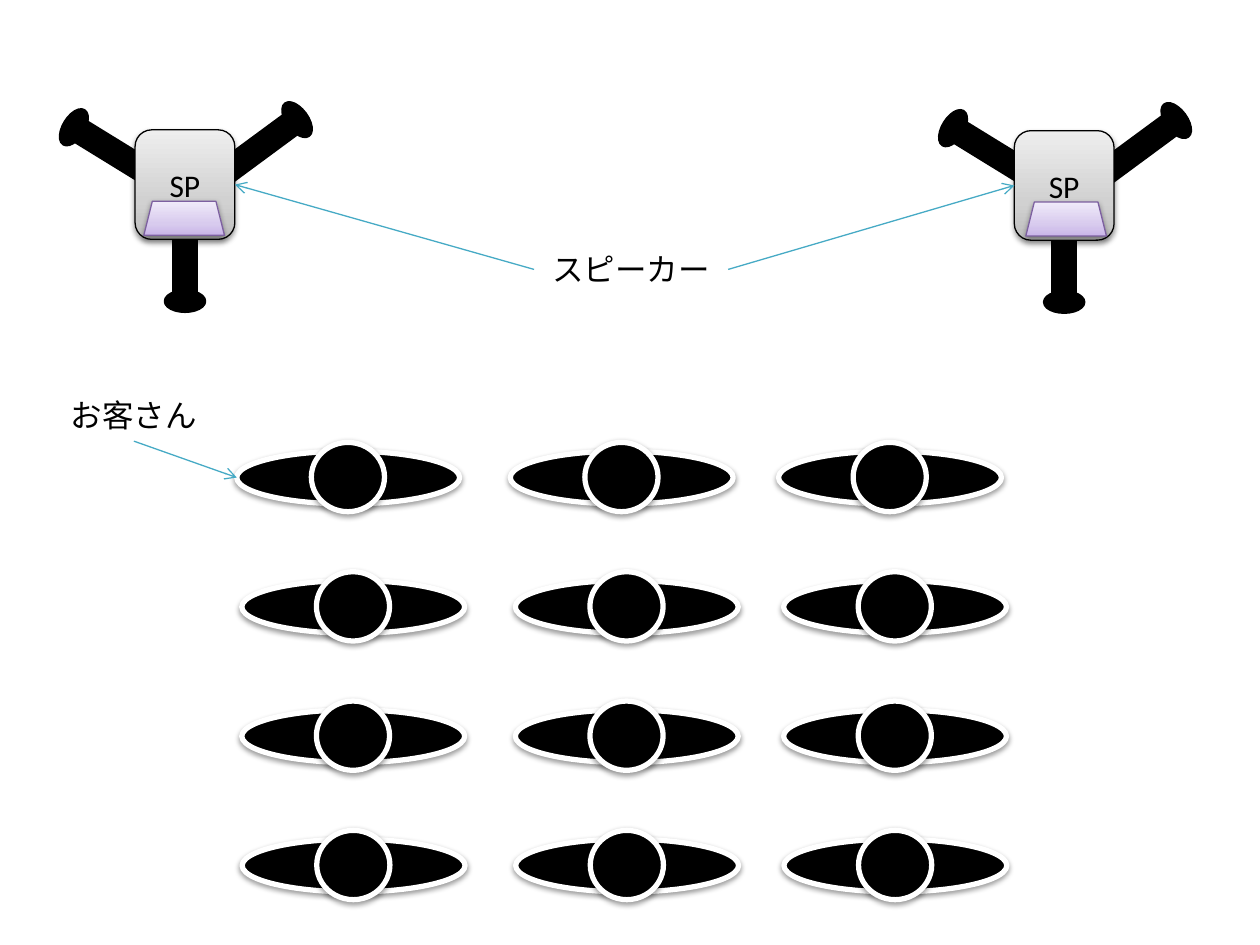
from lxml.etree import SubElement
from pptx import Presentation
from pptx.dml.color import RGBColor
from pptx.enum.shapes import MSO_CONNECTOR, MSO_SHAPE as Shape
from pptx.enum.text import MSO_ANCHOR, MSO_AUTO_SIZE, PP_ALIGN
from pptx.oxml.ns import qn
from pptx.util import Pt

COLORS = {
    "black": "000000",
    "white": "FFFFFF",
    "arrow": "46AAC5",
    "panel_edge": "7D60A0",
}
GRADIENTS = {
    "cabinet": [(0, "BDBDBD"), (35, "D1D1D1"), (100, "EEEEEE")],
    "panel": [(0, "C9B5E8"), (35, "D8CBEE"), (100, "F0EAF9")],
}
FONT = "Calibri"
TOP, LEFT, BOTTOM, RIGHT = range(4)

CABINET_SIZE = (57, 62.6)
FOOT_WIDTH, FOOT_HEIGHT = 22.3, 11.5
ROD_WIDTH, ROD_HEIGHT = 13, 62.6
LEG_HEIGHT = 64.8
LEGS = [(28.5, 71.3, 0), (-12.3, 12.5, 121.6), (71.1, 10, 233.6)]

COLUMN_LEFTS = [138.2, 294.5, 447.8]
ROW_SHIFTS = [-2.9, 0, 0, 0.2]
FIRST_ROW_TOP, ROW_STEP = 257.8, 73.9


def rgb(name):
    return RGBColor.from_string(COLORS[name])


def add_shadow(shape):
    effects = shape._element.spPr.find(qn("a:effectLst"))
    shadow = SubElement(effects, qn("a:outerShdw"), blurRad="40000",
                        dist="20000", dir="5400000", rotWithShape="0")
    tint = SubElement(shadow, qn("a:srgbClr"), val=COLORS["black"])
    SubElement(tint, qn("a:alpha"), val="38000")


def fill_gradient(shape, stops):
    shape.fill.gradient()
    shape.fill.gradient_angle = 90
    stop_list = shape._element.spPr.find(".//" + qn("a:gsLst"))
    for stop in list(stop_list):
        stop_list.remove(stop)
    for percent, value in stops:
        stop = SubElement(stop_list, qn("a:gs"), pos=str(percent * 1000))
        SubElement(stop, qn("a:srgbClr"), val=value)


def add_figure(shapes, kind, left, top, width, height, edge="black",
               edge_width=0.75, gradient=None, shadow=True):
    figure = shapes.add_shape(kind, Pt(left), Pt(top), Pt(width), Pt(height))
    figure.shadow.inherit = False
    if gradient:
        fill_gradient(figure, GRADIENTS[gradient])
    else:
        figure.fill.solid()
        figure.fill.fore_color.rgb = rgb("black")
    figure.line.color.rgb = rgb(edge)
    figure.line.width = Pt(edge_width)
    if shadow:
        add_shadow(figure)
    return figure


def write(frame, text, size=18, color="black", align=PP_ALIGN.CENTER,
          anchor=MSO_ANCHOR.TOP):
    frame.word_wrap = True
    frame.vertical_anchor = anchor
    paragraph = frame.paragraphs[0]
    paragraph.alignment = align
    run = paragraph.add_run()
    run.text = text
    run.font.name = FONT
    run.font.size = Pt(size)
    run.font.color.rgb = rgb(color)


def add_label(shapes, text, left, top):
    label = shapes.add_textbox(Pt(left), Pt(top), Pt(110.9), Pt(29.1))
    write(label.text_frame, text)
    label.text_frame.auto_size = MSO_AUTO_SIZE.SHAPE_TO_FIT_TEXT
    return label


def add_leg(shapes, center_x, center_y, angle):
    leg = shapes.add_group_shape()
    top = center_y - LEG_HEIGHT / 2
    add_figure(leg.shapes, Shape.RECTANGLE, center_x - ROD_WIDTH / 2, top,
               ROD_WIDTH, ROD_HEIGHT, edge_width=2, shadow=False)
    add_figure(leg.shapes, Shape.OVAL, center_x - FOOT_WIDTH / 2,
               top + LEG_HEIGHT - FOOT_HEIGHT, FOOT_WIDTH, FOOT_HEIGHT,
               edge_width=2, shadow=False)
    leg.rotation = angle


def add_speaker(shapes, left, top):
    for x, y, angle in LEGS:
        add_leg(shapes, left + x, top + y, angle)
    cabinet = add_figure(shapes, Shape.ROUNDED_RECTANGLE, left, top,
                         *CABINET_SIZE, gradient="cabinet")
    write(cabinet.text_frame, "SP", anchor=MSO_ANCHOR.MIDDLE)
    return cabinet


def add_listener(shapes, left, top):
    listener = shapes.add_group_shape().shapes
    outline = {"edge": "white", "edge_width": 3}
    shoulders = add_figure(listener, Shape.OVAL, left, top, 127.4, 30.2,
                           **outline)
    add_figure(listener, Shape.OVAL, left + 42.6, top - 5, 41.8, 39.6,
               **outline)
    return shoulders


def add_arrow(shapes, label, label_side, target, target_side=None):
    end_x, end_y = target.left, target.top + target.height // 2
    arrow = shapes.add_connector(MSO_CONNECTOR.STRAIGHT, label.left,
                                 label.top, end_x, end_y)
    arrow.begin_connect(label, label_side)
    if target_side is not None:
        arrow.end_connect(target, target_side)
    arrow.line.color.rgb = rgb("arrow")
    arrow.line.width = Pt(0.75)
    SubElement(arrow.line._get_or_add_ln(), qn("a:tailEnd"), type="arrow")
    SubElement(arrow._element.spPr, qn("a:effectLst"))


def main():
    deck = Presentation()
    deck.slide_width, deck.slide_height = Pt(720), Pt(540)
    shapes = deck.slides.add_slide(deck.slide_layouts[6]).shapes

    left_speaker = add_speaker(shapes, 77.2, 74.2)
    right_speaker = add_speaker(shapes, 579.6, 74.7)

    audience = [
        add_listener(shapes, left + shift, FIRST_ROW_TOP + row * ROW_STEP)
        for row, shift in enumerate(ROW_SHIFTS)
        for left in COLUMN_LEFTS
    ]

    speaker_label = add_label(shapes, "スピーカー", 305.2, 139.4)
    add_arrow(shapes, speaker_label, RIGHT, right_speaker, LEFT)
    add_arrow(shapes, speaker_label, LEFT, left_speaker, RIGHT)
    for left, top in [(82.2, 115.1), (586.2, 115.5)]:
        add_figure(shapes, Shape.TRAPEZOID, left, top, 46.1, 19.4,
                   edge="panel_edge", gradient="panel")

    audience_label = add_label(shapes, "お客さん", 21.1, 223)
    add_arrow(shapes, audience_label, BOTTOM, audience[0])

    deck.save("out.pptx")


if __name__ == "__main__":
    main()
